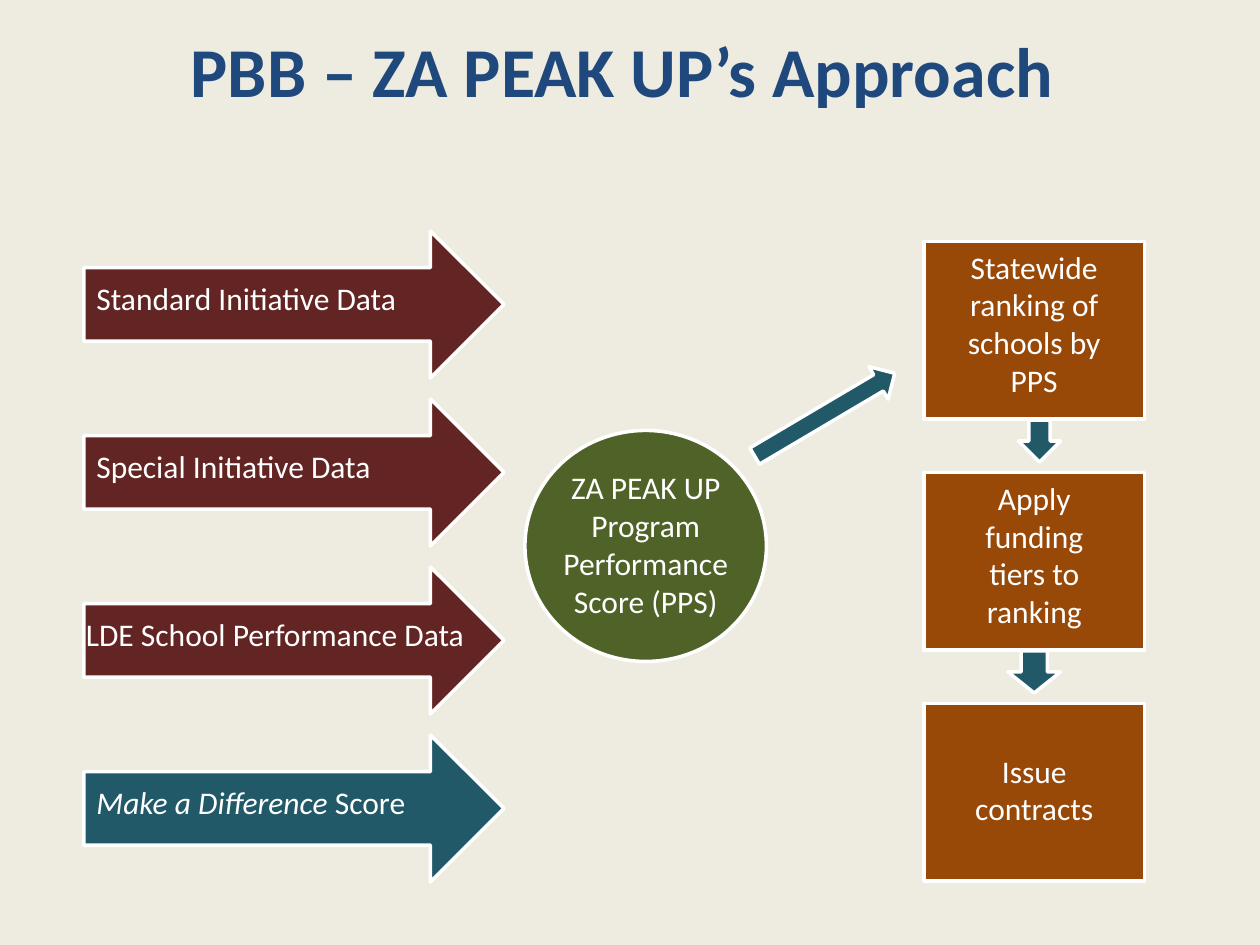
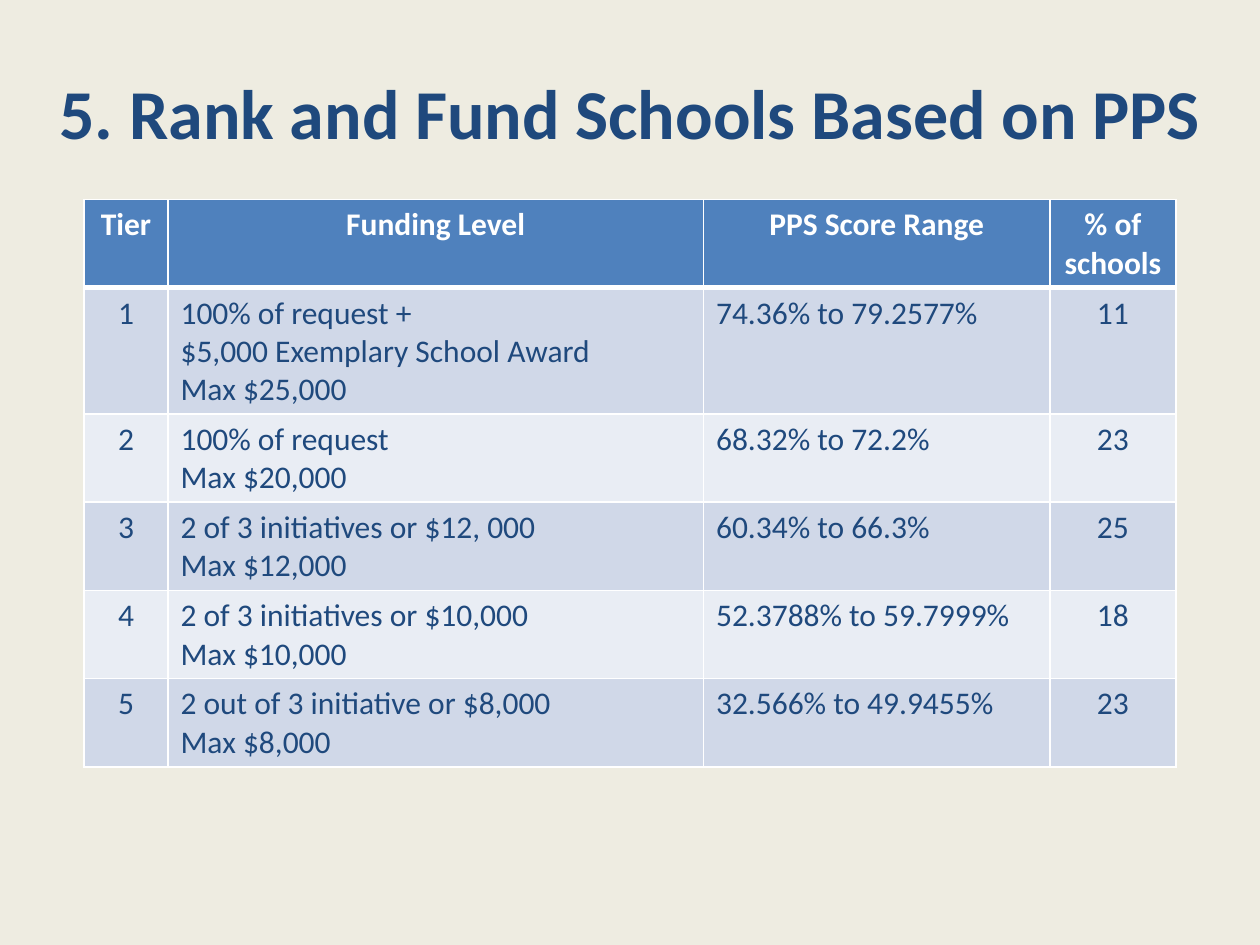
from pptx import Presentation
from pptx.util import Inches, Pt
from pptx.dml.color import RGBColor
from pptx.enum.shapes import MSO_SHAPE as Kind
from pptx.enum.text import PP_ALIGN as Align
from pptx.oxml.ns import qn
from lxml.etree import SubElement as Sub

# Shared look; the grid has 120 columns and 90 rows
hue = RGBColor.from_string
FONT = "Calibri"
WHITE, NAVY, CREAM = "FFFFFF", "1F497D", "EEECE1"
MAROON, TEAL, GREEN, RUST = "632523", "215968", "4F6228", "984807"
HEAD, BANDS = "4F81BD", ("D0D8E8", "E9EDF4")
UNIT = Inches(10) // 120
MID, LEFT = Align.CENTER, Align.LEFT


def write(frame, text, tint, align, size=18, bold=False):
    """Fill a frame; a line break starts a paragraph, *stars* mark italics."""
    frame.word_wrap = True
    for n, line in enumerate(text.split("\n")):
        para = frame.add_paragraph() if n else frame.paragraphs[0]
        para.alignment = align
        for k, part in enumerate(line.split("*")):
            if part:
                run = para.add_run()
                run.text = part
                font = run.font
                font.name, font.size, font.bold = FONT, Pt(size), bold
                font.italic = k % 2 == 1
                font.color.rgb = hue(tint)


def draw(slide, kind, fill, *at):
    """Add a white-edged shape at grid left, top, width, height."""
    shape = slide.shapes.add_shape(kind, *(int(v * UNIT) for v in at))
    shape.shadow.inherit = False
    shape.fill.solid()
    shape.fill.fore_color.rgb = hue(fill)
    shape.line.color.rgb = hue(WHITE)
    shape.line.width = Pt(2)
    return shape


deck = Presentation()
deck.slide_width, deck.slide_height = 120 * UNIT, 90 * UNIT

# Backgrounds and titles
pages = []
for title, top in (("PBB – ZA PEAK UP’s Approach ", 2),
                   ("5. Rank and Fund Schools Based on PPS", 6)):
    page = deck.slides.add_slide(deck.slide_layouts[6])
    page.background.fill.solid()
    page.background.fill.fore_color.rgb = hue(CREAM)
    box = page.shapes.add_textbox(0, top * UNIT, 120 * UNIT, 9 * UNIT)
    write(box.text_frame, title, NAVY, MID, 40, True)
    pages.append(page)
flow, rank = pages

# Data arrows on the left, one every 16 rows
labels = []
data = (("Standard Initiative Data", MAROON, 8, 32),
        ("Special Initiative Data", MAROON, 8, 29),
        ("LDE School Performance Data", MAROON, 7, 40),
        ("*Make a Difference *Score", TEAL, 8, 38))
for n, (text, fill, left, wide) in enumerate(data):
    top = 22 + 16 * n
    draw(flow, Kind.RIGHT_ARROW, fill, 8, top, 40, 14)
    labels.append((text, LEFT, left, top + 4, wide, 5))

# Score circle in the middle
draw(flow, Kind.OVAL, GREEN, 50, 41, 23, 22)
labels.append(("ZA PEAK UP Program Performance Score (PPS)", MID, 49, 44, 25, 16))

# Steps on the right, one every 22 rows
steps = (("Statewide ranking of schools by PPS", 89, 0, 19),
         ("Apply funding tiers to ranking", 91, 0, 15),
         ("Issue contracts", 91, 4, 15))
for n, (text, left, drop, wide) in enumerate(steps):
    top = 23 + 22 * n
    draw(flow, Kind.RECTANGLE, RUST, 88, top, 21, 16.9)
    labels.append((text, MID, left, top + drop, wide, 16))

# Arrows between the steps
draw(flow, Kind.RIGHT_ARROW, TEAL, 70.8, 37.7, 15.5, 3.6).rotation = 329.4
draw(flow, Kind.DOWN_ARROW, TEAL, 97, 40, 4, 4)
draw(flow, Kind.DOWN_ARROW, TEAL, 96, 62, 5, 4)

# Labels on top of the shapes
for text, align, *at in labels:
    box = flow.shapes.add_textbox(*(v * UNIT for v in at))
    write(box.text_frame, text, WHITE, align)

# Funding table
rows = (
    ("Tier", "Funding Level", "PPS Score Range", "% of schools"),
    ("1", "100% of request +\n$5,000 Exemplary School Award\nMax $25,000",
     "74.36% to 79.2577%", "11"),
    ("2", "100% of request\nMax $20,000", "68.32% to 72.2%", "23"),
    ("3", "2 of 3 initiatives or $12, 000\nMax $12,000", "60.34% to 66.3%", "25"),
    ("4", "2 of 3 initiatives or $10,000\nMax $10,000", "52.3788% to 59.7999%", "18"),
    ("5", "2 out of 3 initiative or $8,000\nMax $8,000", "32.566% to 49.9455%", "23"),
)
table = rank.shapes.add_table(len(rows), 4, 8 * UNIT, 19 * UNIT,
                              104 * UNIT, 54 * UNIT).table
for col, wide in zip(table.columns, (8, 51, 33, 12)):
    col.width = wide * UNIT
for r, row in enumerate(rows):
    table.rows[r].height = Inches(1 if r == 1 else 0.7)
    for c, text in enumerate(row):
        cell = table.cell(r, c)
        cell.fill.solid()
        cell.fill.fore_color.rgb = hue(BANDS[(r - 1) % 2] if r else HEAD)
        write(cell.text_frame, text, NAVY if r else WHITE,
              LEFT if r and c in (1, 2) else MID, bold=r == 0)
        # White borders, heavy below the header
        props = cell._tc.get_or_add_tcPr()
        for n, side in enumerate(("lnL", "lnR", "lnT", "lnB")):
            thick = (r, side) in ((0, "lnB"), (1, "lnT"))
            line = Sub(props, qn("a:" + side), w=str(Pt(3 if thick else 1)))
            Sub(Sub(line, qn("a:solidFill")), qn("a:srgbClr"), val=WHITE)
            props.insert(n, line)

deck.save("out.pptx")
